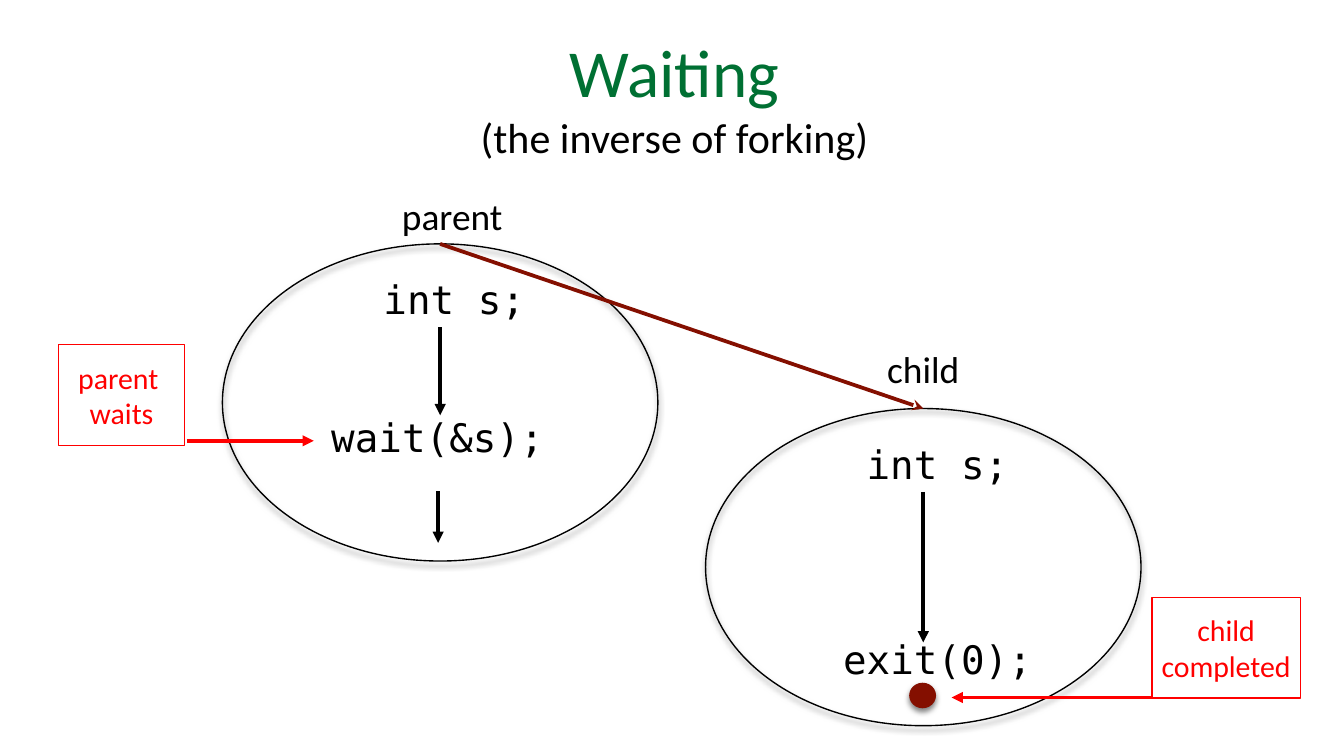
from dataclasses import dataclass

from lxml import etree
from pptx import Presentation
from pptx.dml.color import RGBColor
from pptx.enum import shapes, text
from pptx.oxml import ns
from pptx.util import Pt

PX = 4572  # EMU per px, 200 px to the inch


@dataclass(frozen=True)
class Theme:
    green: str = "007033"
    black: str = "000000"
    white: str = "FFFFFF"
    red: str = "FF0000"
    maroon: str = "840F00"
    sans: str = "Calibri"
    mono: str = "DejaVu Sans Mono"
    title: float = 36
    subtitle: float = 22.5
    code: float = 21
    label: float = 20
    note: float = 16
    thin: float = 0.75
    thick: float = 2


THEME = Theme()


def px(*lengths):
    return [round(length * PX) for length in lengths]


def colour(value):
    return RGBColor.from_string(value)


def write(shape, lines, wrap=False, indent=0):
    """Fill a shape with centred paragraphs of (words, size, font, colour)."""
    frame = shape.text_frame
    frame.word_wrap = wrap
    frame.vertical_anchor = text.MSO_ANCHOR.MIDDLE
    frame.margin_left = frame.margin_right = frame.margin_top = frame.margin_bottom = 8 * PX
    for index, (words, size, font, ink) in enumerate(lines):
        para = frame.paragraphs[0] if index == 0 else frame.add_paragraph()
        para.alignment = text.PP_ALIGN.CENTER
        if indent:
            para._p.get_or_add_pPr().set("marL", str(indent * PX))
        for row, part in enumerate(words.split("\n")):
            if row:
                para.add_line_break()
            span = para.add_run()
            span.text = part
            span.font.size = Pt(size)
            span.font.name = font
            span.font.color.rgb = colour(ink)


def add_words(page, box, *lines, wrap=False, indent=0):
    write(page.shapes.add_textbox(*px(*box)), lines, wrap, indent)


def add_outline(page, kind, box, fill=None, line=None):
    shape = page.shapes.add_shape(kind, *px(*box))
    shape.shadow.inherit = False
    if fill:
        shape.fill.solid()
        shape.fill.fore_color.rgb = colour(fill)
    else:
        shape.fill.background()
    if line:
        shape.line.color.rgb = colour(line)
        shape.line.width = Pt(THEME.thin)
    else:
        shape.line.fill.background()
    return shape


def add_shadow(shape):
    effects = shape._element.spPr.find(ns.qn("a:effectLst"))
    shadow = etree.SubElement(effects, ns.qn("a:outerShdw"), blurRad=str(Pt(3)),
                              dist=str(Pt(2)), dir="5400000", rotWithShape="0")
    tint = etree.SubElement(shadow, ns.qn("a:srgbClr"), val=THEME.black)
    etree.SubElement(tint, ns.qn("a:alpha"), val="50000")


def add_arrow(page, start, end, ink, head="triangle"):
    arrow = page.shapes.add_connector(shapes.MSO_CONNECTOR.STRAIGHT, *px(*start, *end))
    arrow.line.color.rgb = colour(ink)
    arrow.line.width = Pt(THEME.thick)
    etree.SubElement(arrow.line._get_or_add_ln(), ns.qn("a:tailEnd"), type=head)
    etree.SubElement(arrow._element.spPr, ns.qn("a:effectLst"))


def add_heading(page, box):
    add_words(page, box,
              ("Waiting", THEME.title, THEME.sans, THEME.green),
              ("(the inverse of forking)", THEME.subtitle, THEME.sans, THEME.black),
              wrap=True, indent=6)


def add_process(page, box, name, name_box, call, call_box, arrow_end):
    """Draw a process; name_box, call_box and arrow_end are relative to its box."""
    left, top, width, height = box

    def inside(x, y, w, h):
        return left + x, top + y, w, h

    add_shadow(add_outline(page, shapes.MSO_SHAPE.OVAL, box, line=THEME.black))
    add_words(page, inside(*name_box), (name, THEME.label, THEME.sans, THEME.black))
    add_words(page, inside(231, 38, 228, 88), ("int s;", THEME.code, THEME.mono, THEME.black))
    add_words(page, inside(*call_box), (call, THEME.code, THEME.mono, THEME.black))
    middle = left + width / 2
    add_arrow(page, (middle, top + 124), (middle, top + arrow_end), THEME.black)


def add_note(page, box, words, arrow_start, arrow_end):
    """Draw a red note; its arrow runs level, from and to x offsets in its box."""
    left, top, width, height = box
    note = add_outline(page, shapes.MSO_SHAPE.RECTANGLE, box, THEME.white, THEME.red)
    write(note, [(words, THEME.note, THEME.sans, THEME.red)], wrap=True)
    (x1, y), x2 = arrow_start, arrow_end
    add_arrow(page, (left + x1, top + y), (left + x2, top + y), THEME.red)


def main():
    deck = Presentation()
    deck.slide_width, deck.slide_height = px(2000, 1125)
    page = deck.slides.add_slide(deck.slide_layouts[6])

    add_heading(page, (408, 4, 1186, 278))

    # Parent and child processes
    parent = (331, 363, 648, 472)
    child = (1050, 608, 648, 472)
    add_process(page, parent, "parent", (234, -84, 216, 84),
                "wait(&s);", (153, 243, 334, 88), 255)
    add_process(page, child, "child", (230, -102, 188, 84),
                "exit(0);", (196, 328, 298, 88), 348)

    # Parent goes on after waiting
    add_arrow(page, (652, 731), (652, 808), THEME.black)

    # Fork from the top of the parent to the top of the child
    fork_start, fork_end = [(x + w / 2, y) for x, y, w, h in (parent, child)]
    add_arrow(page, fork_start, fork_end, THEME.maroon, "stealth")

    # End of the child
    add_shadow(add_outline(page, shapes.MSO_SHAPE.OVAL, (1353, 1016, 40, 38), THEME.maroon))

    # Red notes
    add_note(page, (87, 513, 188, 150), "parent \nwaits", (191, 143), 380)
    add_note(page, (1714, 889, 221, 150), "child completed", (0, 149), -298)

    deck.save("out.pptx")


if __name__ == "__main__":
    main()
